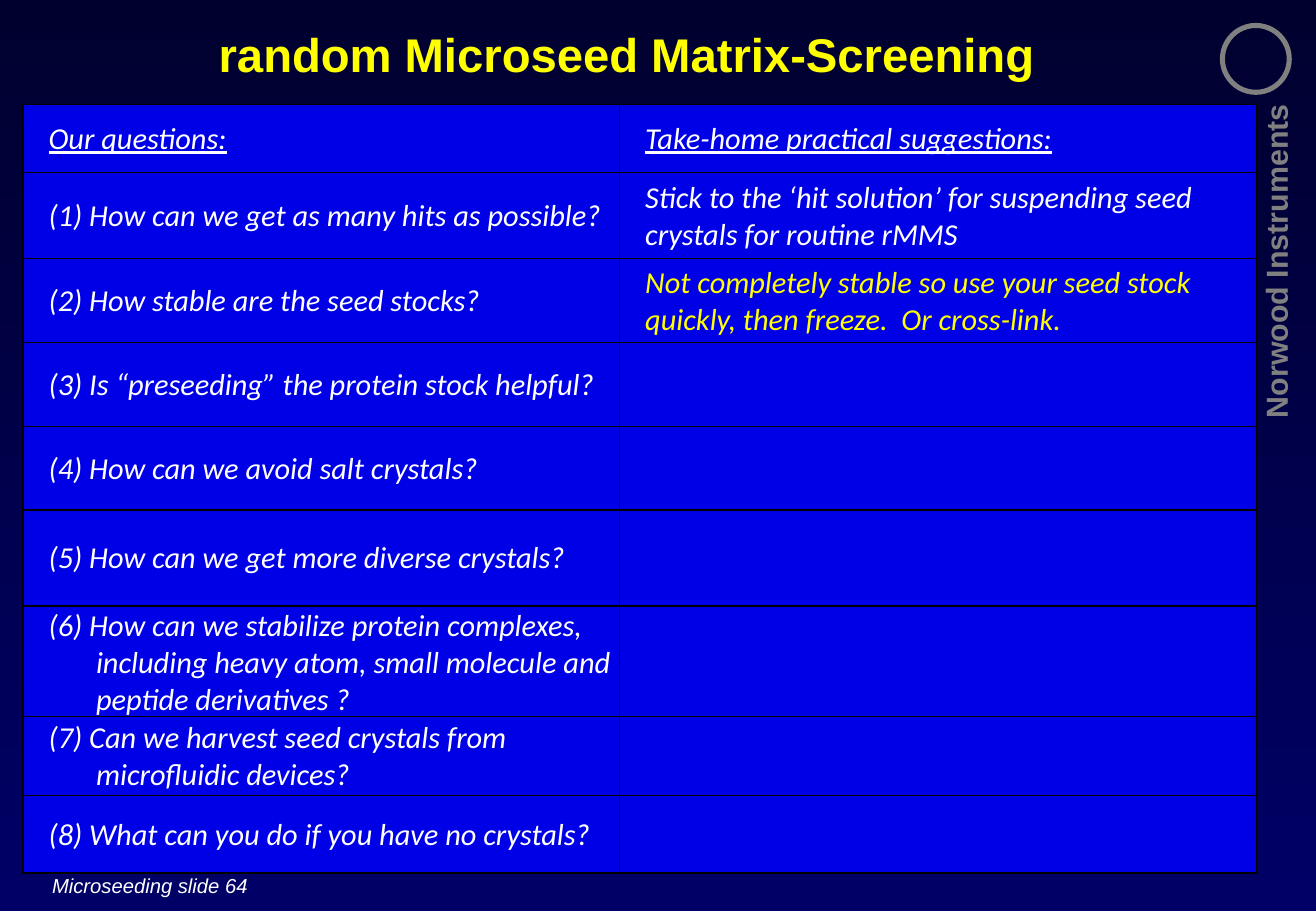
from typing import NamedTuple

from lxml import etree
from pptx import Presentation
from pptx import util as u
from pptx.dml.color import RGBColor
from pptx.enum import shapes, text
from pptx.oxml import ns

WHITE, YELLOW, GREY = "FFFFFF", "FFFF00", "808080"
BLUE, BLACK = "0000E6", "000000"
COLS = (4.91, 5.24)


class Look(NamedTuple):
    size: float
    color: str = WHITE
    font: str = "Arial"
    bold: bool = False
    italic: bool = False
    under: bool = False


class Entry(NamedTuple):
    words: str
    left: float = 0.59
    first: float = -0.39
    color: str = WHITE
    under: bool = False


class Row(NamedTuple):
    height: float
    cells: tuple[Entry, ...]


ROWS = (
    Row(0.56, (Entry("Our questions:", 0.2, 0, under=True),
               Entry("Take-home practical suggestions:", 0, 0.2, under=True))),
    Row(0.71, (Entry("(1) How can we get as many hits as possible?", 0.49, -0.29),
               Entry("Stick to the ‘hit solution’ for suspending seed "
                     "crystals for routine rMMS", 0.2, 0))),
    Row(0.69, (Entry("(2) How stable are the seed stocks?"),
               Entry("Not completely stable so use your seed stock quickly, "
                     "then freeze.  Or cross-link.", 0.2, 0, YELLOW))),
    Row(0.69, (Entry("(3) Is “preseeding” the protein stock helpful?"),)),
    Row(0.69, (Entry("(4) How can we avoid salt crystals?"),)),
    Row(0.79, (Entry("(5) How can we get more diverse crystals?", 0.4, -0.2),)),
    Row(0.91, (Entry("(6) How can we stabilize protein complexes, including heavy "
                     "atom, small molecule and peptide derivatives ?"),)),
    Row(0.65, (Entry("(7) Can we harvest seed crystals from microfluidic devices?"),)),
    Row(0.64, (Entry("(8) What can you do if you have no crystals?"),)),
)


def paint(target, color: str) -> None:
    """Give a solid fill, a line's fill or a font one hex colour."""
    fill = target if hasattr(target, "solid") else target.fill
    fill.solid()
    fill.fore_color.rgb = RGBColor.from_string(color)


def add_run(para, words: str, look: Look) -> None:
    run = para.add_run()
    run.text = words
    font = run.font
    font.name, font.size = look.font, u.Pt(look.size)
    font.bold, font.italic, font.underline = look.bold, look.italic, look.under
    paint(font, look.color)


def place(shape, left: float, top: float, width: float, height: float) -> None:
    shape.left, shape.top = u.Inches(left), u.Inches(top)
    shape.width, shape.height = u.Inches(width), u.Inches(height)


def add_label(slide, words: str, box: tuple[float, ...], look: Look,
              wrap: bool = True, align=text.PP_ALIGN.LEFT, turn: float = 0) -> None:
    label = slide.shapes.add_textbox(*map(u.Inches, box))
    label.rotation = turn
    frame = label.text_frame
    frame.word_wrap = wrap
    para = frame.paragraphs[0]
    para.alignment = align
    add_run(para, words, look)


def add_edges(cell) -> None:
    """Draw a thin black border on all four sides of a cell."""
    props = cell._tc.get_or_add_tcPr()
    for spot, side in enumerate("LRTB"):
        edge = etree.Element(ns.qn(f"a:ln{side}"), w=str(u.Pt(1)))
        fill = etree.SubElement(edge, ns.qn("a:solidFill"))
        etree.SubElement(fill, ns.qn("a:srgbClr"), val=BLACK)
        props.insert(spot, edge)


def fill_cell(cell, entry: Entry) -> None:
    para = cell.text_frame.paragraphs[0]
    props = para._p.get_or_add_pPr()
    props.set("marL", str(u.Inches(entry.left)))
    props.set("indent", str(u.Inches(entry.first)))
    add_run(para, entry.words,
            Look(18, entry.color, "Calibri", italic=True, under=entry.under))


def add_grid(slide) -> None:
    height = sum(row.height for row in ROWS)
    box = map(u.Inches, (0.19, 0.86, sum(COLS), height))
    table = slide.shapes.add_table(len(ROWS), len(COLS), *box).table
    table.first_row = table.horz_banding = False
    for col, width in zip(table.columns, COLS):
        col.width = u.Inches(width)
    for line, row in zip(table.rows, ROWS):
        line.height = u.Inches(row.height)
        for cell in line.cells:
            cell.margin_left = cell.margin_right = cell.margin_top = u.Inches(0.01)
            cell.margin_bottom = 0
            cell.vertical_anchor = text.MSO_ANCHOR.MIDDLE
            paint(cell, BLUE)
            add_edges(cell)
        for cell, entry in zip(line.cells, row.cells):
            fill_cell(cell, entry)


def add_title(slide) -> None:
    title = slide.shapes.title
    place(title, -0.26, 0.16, 10.83, 0.57)
    frame = title.text_frame
    frame.auto_size = text.MSO_AUTO_SIZE.NONE
    frame.vertical_anchor = text.MSO_ANCHOR.MIDDLE
    para = frame.paragraphs[0]
    para.alignment = text.PP_ALIGN.CENTER
    add_run(para, "random Microseed Matrix-Screening", Look(28, YELLOW, bold=True))


def add_ring(slide) -> None:
    ring = slide.shapes.add_shape(shapes.MSO_SHAPE.OVAL,
                                  *map(u.Inches, (10.06, 0.21, 0.55, 0.55)))
    ring.shadow.inherit = False
    ring.fill.background()
    paint(ring.line, GREY)
    ring.line.width = u.Pt(3)


def main() -> None:
    deck = Presentation()
    deck.slide_width, deck.slide_height = u.Inches(10.83), u.Inches(7.5)
    slide = deck.slides.add_slide(deck.slide_layouts[5])
    back = slide.background.fill
    back.gradient()
    back.gradient_angle = 270
    for stop, color in zip(back.gradient_stops, ("00002F", "000066")):
        stop.color.rgb = RGBColor.from_string(color)
    add_label(slide, "Norwood Instruments", (9, 2.06, 3, 0.4),
              Look(18, GREY, bold=True), align=text.PP_ALIGN.RIGHT, turn=270)
    add_label(slide, "Microseeding slide 64", (0.33, 7.14, 1.82, 0.3),
              Look(12, italic=True), wrap=False)
    add_ring(slide)
    add_title(slide)
    add_grid(slide)
    deck.save("out.pptx")


if __name__ == "__main__":
    main()
